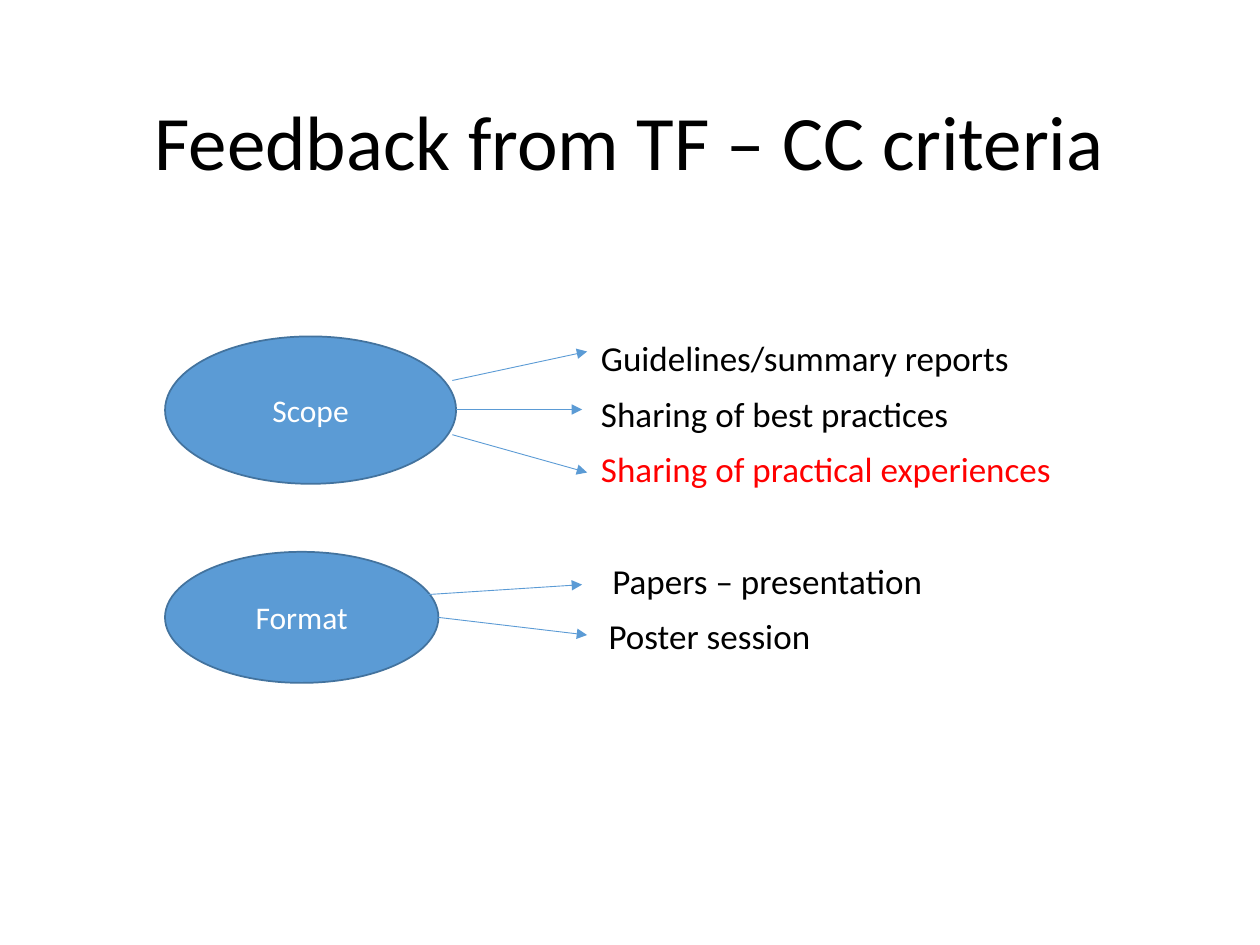
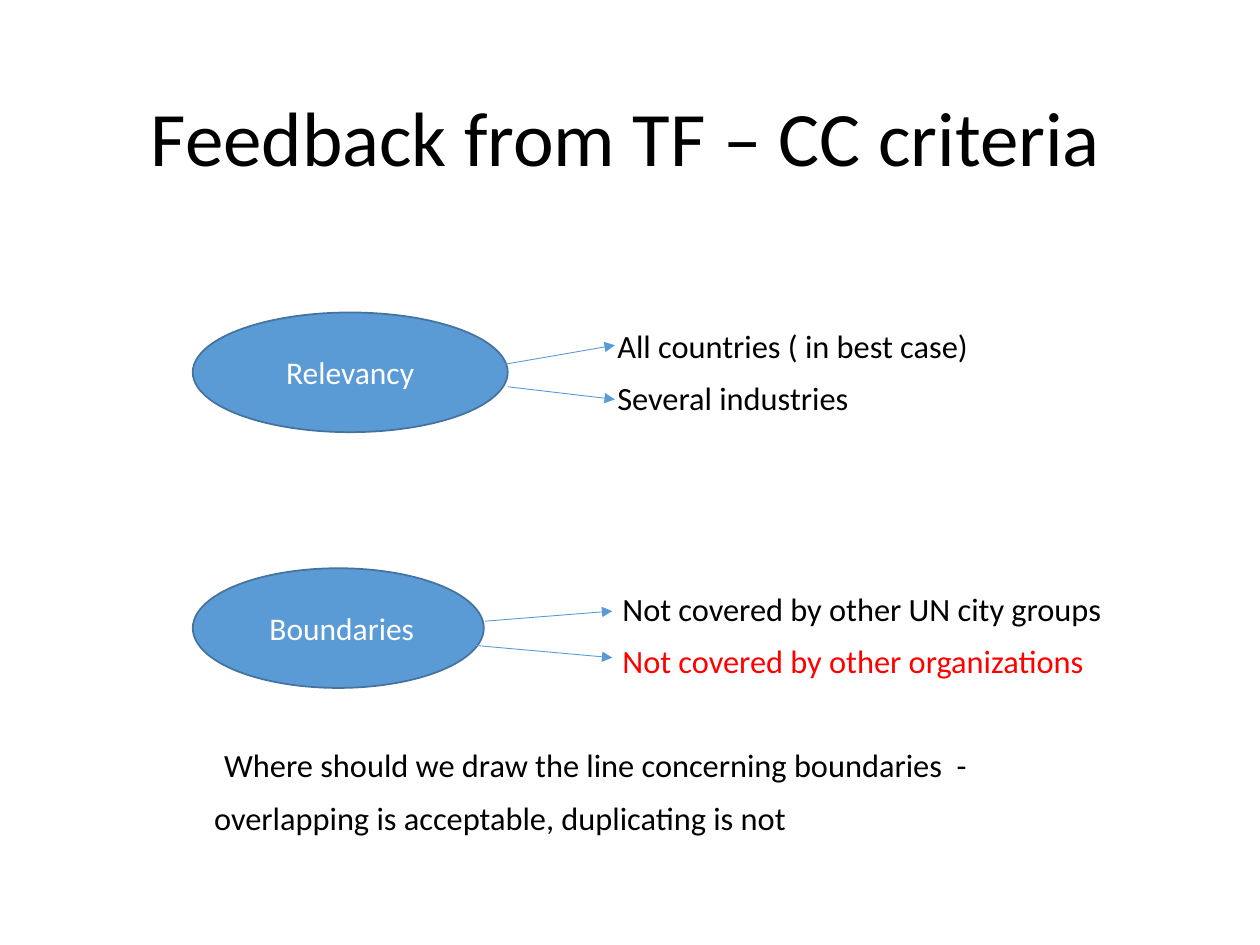
from lxml.etree import SubElement as Sub
from pptx import Presentation
from pptx.dml.color import RGBColor
from pptx.enum.shapes import MSO_CONNECTOR as Link, MSO_SHAPE as Kind
from pptx.enum.text import MSO_ANCHOR as Anchor, PP_ALIGN as Align
from pptx.oxml.ns import qn
from pptx.util import Inches, Pt

# Shared style
FONT = "Calibri"
BLACK, RED, WHITE = "000000", "FF0000", "FFFFFF"
BLUE, EDGE = "5B9BD5", "43739E"
TITLE = "Feedback from TF – CC criteria"


def color(code):
    return RGBColor.from_string(code)


def write(para, text, size, code):
    run = para.add_run()
    run.text = text
    run.font.name = FONT
    run.font.size = Pt(size)
    run.font.color.rgb = color(code)


# Per slide: title corner, text size, ovals, arrows, and text blocks.
# A block has left, top, width and lines of (text, colour, first-line indent).
slides = [
    {
        "title": (1.13, 0.43),
        "size": 20,
        "ovals": [
            ("Scope", 1.31, 2.67, 2.31, 1.17),
            ("Format", 1.31, 4.38, 2.17, 1.04),
        ],
        "arrows": [
            (3.59, 3.02, 4.66, 2.79),
            (3.62, 3.25, 4.62, 3.25),
            (3.59, 3.45, 4.66, 3.75),
            (3.38, 4.72, 4.62, 4.64),
            (3.48, 4.9, 4.66, 5.04),
        ],
        "blocks": [
            (4.77, 2.71, 4.5, [
                ("Guidelines/summary reports", BLACK, 0),
                ("Sharing of best practices", BLACK, 0),
                ("Sharing of practical experiences", RED, 0),
            ]),
            (4.83, 4.48, 4.4, [
                ("Papers – presentation", BLACK, 0.03),
                ("Poster session", BLACK, 0),
            ]),
        ],
    },
    {
        "title": (1.1, 0.4),
        "size": 18.5,
        "ovals": [
            ("Relevancy", 1.53, 2.48, 2.5, 0.95),
            (" Boundaries", 1.53, 4.51, 2.31, 0.95),
        ],
        "arrows": [
            (3.84, 2.92, 4.88, 2.74),
            (4.03, 3.07, 4.88, 3.17),
            (3.85, 4.93, 4.86, 4.85),
            (3.74, 5.12, 4.86, 5.22),
        ],
        "blocks": [
            (4.9, 2.62, 4.4, [
                ("All countries ( in best case)", BLACK, 0),
                ("Several industries", BLACK, 0),
            ]),
            (4.94, 4.71, 4.4, [
                ("Not covered by other UN city groups", BLACK, 0),
                ("Not covered by other organizations", RED, 0),
            ]),
            (1.7, 5.95, 7.5, [
                ("Where should we draw the line concerning boundaries  -",
                 BLACK, 0.08),
                ("overlapping is acceptable, duplicating is not", BLACK, 0),
            ]),
        ],
    },
]

deck = Presentation()
deck.slide_width, deck.slide_height = Inches(10), Inches(7.5)

for page in slides:
    slide = deck.slides.add_slide(deck.slide_layouts[6])
    shapes = slide.shapes

    # Title
    left, top = page["title"]
    box = shapes.add_textbox(Inches(left), Inches(top), Inches(8.77), Inches(1.45))
    frame = box.text_frame
    frame.word_wrap = True
    frame.vertical_anchor = Anchor.MIDDLE
    para = frame.paragraphs[0]
    para.line_spacing = 0.9
    write(para, TITLE, 44, BLACK)

    # Text blocks
    for left, top, width, lines in page["blocks"]:
        box = shapes.add_textbox(Inches(left), Inches(top), Inches(width),
                                 Inches(0.45 * len(lines)))
        frame = box.text_frame
        frame.word_wrap = True
        frame.margin_left = frame.margin_right = 0
        frame.margin_top = frame.margin_bottom = 0
        for i, (text, code, indent) in enumerate(lines):
            para = frame.add_paragraph() if i else frame.paragraphs[0]
            para.line_spacing = 0.9
            if i:
                para.space_before = Pt(10)
            if indent:
                para._p.get_or_add_pPr().set("indent", str(Inches(indent)))
            write(para, text, page["size"], code)

    # Ovals
    for text, *place in page["ovals"]:
        oval = shapes.add_shape(Kind.OVAL, *map(Inches, place))
        oval.shadow.inherit = False
        oval.fill.solid()
        oval.fill.fore_color.rgb = color(BLUE)
        oval.line.color.rgb = color(EDGE)
        oval.line.width = Pt(1)
        oval.text_frame.vertical_anchor = Anchor.MIDDLE
        para = oval.text_frame.paragraphs[0]
        para.alignment = Align.CENTER
        write(para, text, 18, WHITE)

    # Arrows
    for ends in page["arrows"]:
        arrow = shapes.add_connector(Link.STRAIGHT, *map(Inches, ends))
        arrow.line.color.rgb = color(BLUE)
        arrow.line.width = Pt(0.5)
        Sub(arrow.line._get_or_add_ln(), qn("a:tailEnd"), type="triangle")
        Sub(arrow._element.spPr, qn("a:effectLst"))

deck.save("out.pptx")
